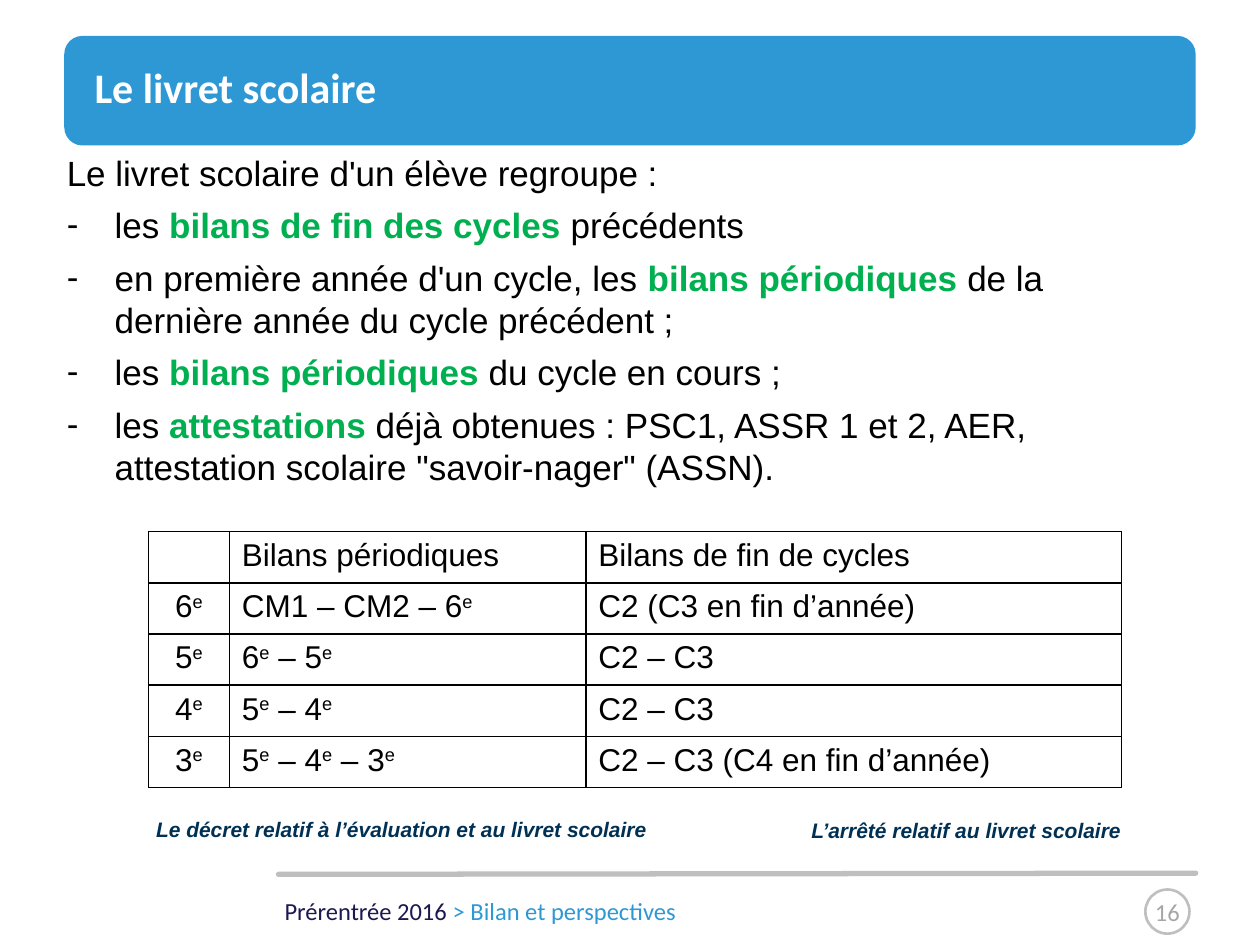
"""Build the slide on the contents of the school record book."""
import pptx
import pptx.dml.color
import pptx.enum.shapes
import pptx.enum.text
import pptx.oxml
import pptx.oxml.ns
import pptx.util

Pt = pptx.util.Pt
RGB = pptx.dml.color.RGBColor
ALIGN = pptx.enum.text.PP_ALIGN
MID = pptx.enum.text.MSO_ANCHOR.MIDDLE
SHAPE = pptx.enum.shapes.MSO_SHAPE
NS = pptx.oxml.ns.nsdecls("a")
BLUE = RGB(0x2E, 0x98, 0xD5)
NAVY = RGB(0x1C, 0x18, 0x50)
DARK = RGB(0x00, 0x31, 0x54)
GREEN = RGB(0x00, 0xB0, 0x50)
GREY = RGB(0xBF, 0xBF, 0xBF)
SILVER = RGB(0xA6, 0xA6, 0xA6)
WHITE = RGB(0xFF, 0xFF, 0xFF)
BLACK = RGB(0, 0, 0)

deck = pptx.Presentation()
deck.slide_width = pptx.util.Inches(10)
deck.slide_height = pptx.util.Inches(7.5)
slide = deck.slides.add_slide(deck.slide_layouts[1])
shapes = slide.shapes


def at(*shares):
    """Turn percentages of the slide's width and height into lengths."""
    sides = (deck.slide_width, deck.slide_height) * 2
    return [round(side * share / 100) for side, share in zip(sides, shares)]


def add(para, text, size, color, face="Arial", bold=False):
    """Add one run to a paragraph."""
    run = para.add_run()
    run.text = text
    run.font.size = Pt(size)
    run.font.name = face
    run.font.color.rgb = color
    run.font.bold = bold
    return run


band = shapes.add_shape(SHAPE.ROUNDED_RECTANGLE, *at(5.1, 3.8, 89.8, 11.6))
band.shadow.inherit = False
band.fill.solid()
band.fill.fore_color.rgb = BLUE
band.line.fill.background()
shapes._spTree.insert(2, band._element)

title = shapes.title
title.left, title.top, title.width, title.height = at(7.5, 2.4, 87.4, 13.6)
frame = title.text_frame
frame.margin_left = frame.margin_right = frame.margin_top = frame.margin_bottom = 0
frame.vertical_anchor = MID
frame.paragraphs[0].alignment = ALIGN.LEFT
add(frame.paragraphs[0], "Le livret scolaire", 24, WHITE, "Calibri", True)

body = slide.placeholders[1]
body.left, body.top, body.width, body.height = at(4.3, 15.33, 92.1, 37.2)
frame = body.text_frame
frame.auto_size = pptx.enum.text.MSO_AUTO_SIZE.NONE
items = [
    "Le livret scolaire d'un élève regroupe :",
    "les |bilans de fin des cycles| précédents",
    "en première année d'un cycle, les |bilans périodiques| de la \n"
    "dernière année du cycle précédent ;",
    "les |bilans périodiques| du cycle en cours ;",
    "les |attestations| déjà obtenues : PSC1, ASSR 1 et 2, AER, \n"
    'attestation scolaire "savoir-nager" (ASSN).',
]
for row, item in enumerate(items):
    para = frame.add_paragraph() if row else frame.paragraphs[0]
    para.space_before = Pt(6)
    props = para._p.get_or_add_pPr()
    dent = pptx.util.Inches(0.38) if row else 0
    props.set("marL", str(dent))
    props.set("indent", str(-dent))
    mark = f'<a:buChar {NS} char="-"/>' if row else f"<a:buNone {NS}/>"
    props.append(pptx.oxml.parse_xml(mark))
    for spot, part in enumerate(item.split("|")):
        strong = spot % 2 == 1
        for turn, line in enumerate(part.split("\n")):
            if turn:
                para.add_line_break()
            add(para, line, 20, GREEN if strong else BLACK, bold=strong)

rows = [
    ["", "Bilans périodiques", "Bilans de fin de cycles"],
    ["6|e", "CM1 – CM2 – 6|e", "C2 (C3 en fin d’année)"],
    ["5|e", "6|e| – 5|e", "C2 – C3"],
    ["4|e", "5|e| – 4|e", "C2 – C3"],
    ["3|e", "5|e| – 4|e| – 3|e", "C2 – C3 (C4 en fin d’année)"],
]
grid = shapes.add_table(len(rows), 3, *at(11.8, 56.27, 77.2, 27.07)).table
grid.first_row = grid.horz_banding = False
for col, width in zip(grid.columns, (6.4, 28.3, 42.5)):
    col.width = at(width)[0]
for r, row in enumerate(rows):
    for c, text in enumerate(row):
        cell = grid.cell(r, c)
        para = cell.text_frame.paragraphs[0]
        if c == 0:
            para.alignment = ALIGN.CENTER
        for spot, part in enumerate(text.split("|") if text else []):
            run = add(para, part, 18, BLACK)
            if spot % 2:
                run.font._element.set("baseline", "30000")
        props = cell._tc.get_or_add_tcPr()
        for side in ("lnL", "lnR", "lnT", "lnB"):
            props.append(pptx.oxml.parse_xml(
                f'<a:{side} {NS} w="{Pt(1)}"><a:solidFill>'
                f'<a:srgbClr val="{BLACK}"/></a:solidFill></a:{side}>'))
        cell.fill.solid()
        cell.fill.fore_color.rgb = WHITE

notes = [
    ("Le décret relatif à l’évaluation et au livret scolaire", 11.4, 85.73, 41.4),
    ("L’arrêté relatif au livret scolaire", 63.4, 85.87, 26.8),
]
for text, left, top, width in notes:
    box = shapes.add_textbox(*at(left, top, width, 4))
    box.text_frame.word_wrap = False
    run = add(box.text_frame.paragraphs[0], text, 12, DARK, bold=True)
    run.font.italic = True

rule = shapes.add_connector(
    pptx.enum.shapes.MSO_CONNECTOR.STRAIGHT, *at(22.1, 92.53, 94.9, 92.4))
rule.line.color.rgb = GREY
rule.line.width = Pt(3)
rule._element.spPr.append(pptx.oxml.parse_xml(f"<a:effectLst {NS}/>"))
rule.line._ln.set("cap", "rnd")

foot = shapes.add_textbox(*at(21.6, 94.13, 59.1, 4.53))
foot.text_frame.word_wrap = True
para = foot.text_frame.paragraphs[0]
add(para, "Prérentrée 2016 ", 14, NAVY, "Calibri")
add(para, "> Bilan et perspectives", 14, BLUE, "Calibri")

disc = shapes.add_shape(SHAPE.OVAL, *at(90.9, 94.13, 3.5, 4.67))
disc.shadow.inherit = False
disc.fill.background()
disc.line.color.rgb = GREY
disc.line.width = Pt(1.5)
frame = disc.text_frame
frame.margin_left = frame.margin_right = 0
frame.vertical_anchor = MID
frame.paragraphs[0].alignment = ALIGN.CENTER
add(frame.paragraphs[0], "16", 14, SILVER, "Calibri")

deck.save("out.pptx")
